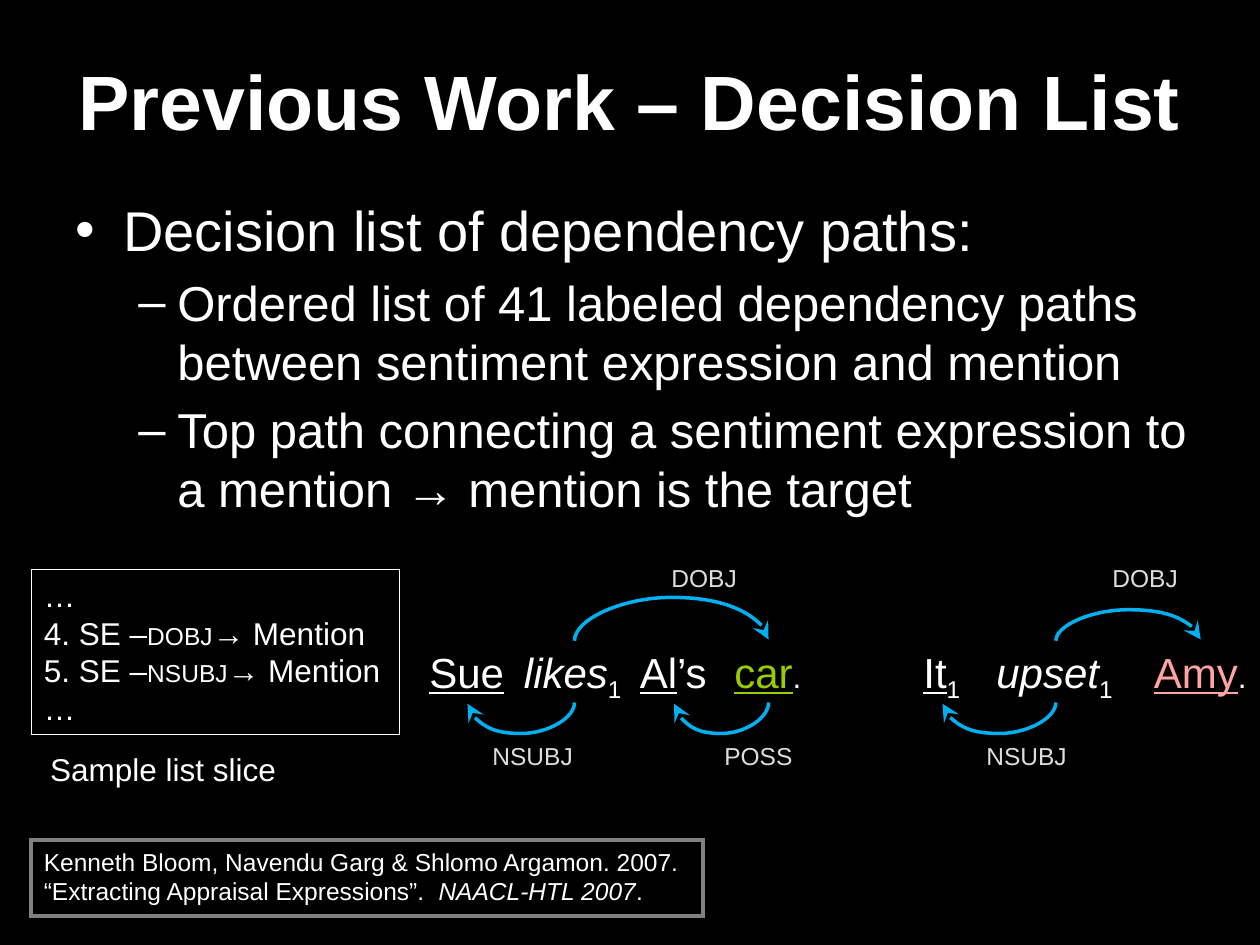
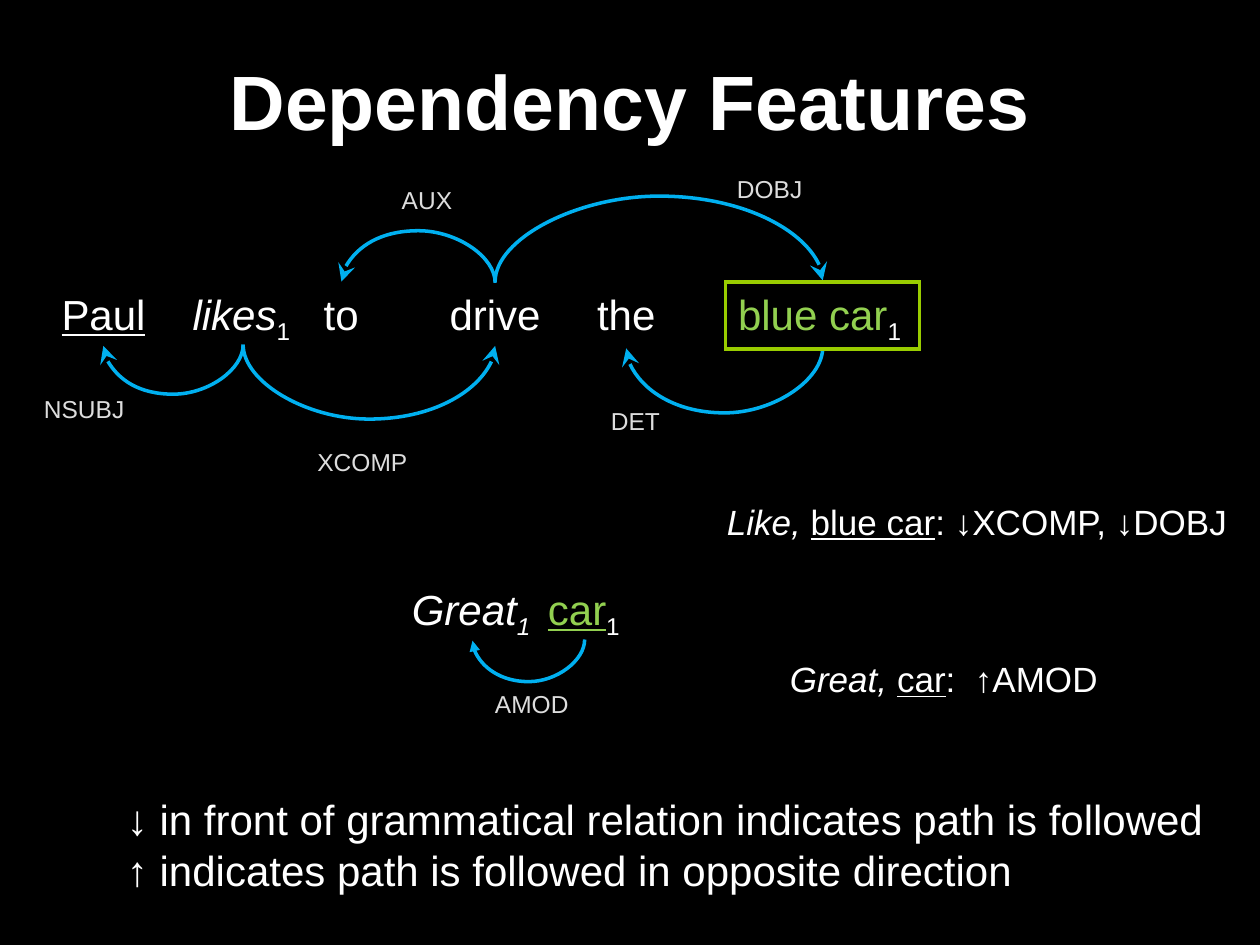
import dataclasses

import pptx
import pptx.dml.color
import pptx.enum.shapes
import pptx.enum.text
import pptx.oxml
import pptx.oxml.ns
import pptx.util

Inches, Pt = pptx.util.Inches, pptx.util.Pt
RGB = pptx.dml.color.RGBColor.from_string
ANCHOR, AUTO = pptx.enum.text.MSO_ANCHOR, pptx.enum.text.MSO_AUTO_SIZE
RECTANGLE = pptx.enum.shapes.MSO_SHAPE.RECTANGLE
CURVE = pptx.enum.shapes.MSO_CONNECTOR.CURVE
SPACE = pptx.oxml.ns.nsdecls("a")


@dataclasses.dataclass(frozen=True)
class Theme:
    font: str = "Arial"
    background: str = "000000"
    text: str = "FFFFFF"
    label: str = "DDDDDD"
    arc: str = "00B0F0"
    target: str = "99CC00"
    feature: str = "92D050"
    rival: str = "FFA3A3"
    citation_line: str = "808080"
    title_size: int = 44
    body_size: int = 32
    sub_size: int = 28
    word_size: int = 24
    path_size: int = 20
    note_size: int = 18
    label_size: int = 14


theme = Theme()
ITALIC, MENTION = {"italic": True}, {"underline": True}
SUB = {"baseline": "-25000"}
STEALTH = 'type="stealth" w="lg" len="lg"'
TRIANGLE = 'type="triangle"'


def write(holder, paragraphs, size, wrap=False, anchor=ANCHOR.TOP, **base):
    """Fill a shape with paragraphs, each a list of (text, format) runs."""
    frame = holder.text_frame
    frame.word_wrap, frame.vertical_anchor = wrap, anchor
    frame.auto_size = AUTO.NONE if wrap else AUTO.SHAPE_TO_FIT_TEXT
    for number, runs in enumerate(paragraphs):
        paragraph = frame.paragraphs[0] if number == 0 else frame.add_paragraph()
        paragraph.alignment = pptx.enum.text.PP_ALIGN.LEFT
        for text, changes in runs:
            run = paragraph.add_run()
            run.text = text
            style = {"size": size, "color": theme.text, "name": theme.font, **base, **changes}
            run.font.color.rgb = RGB(style.pop("color"))
            if "baseline" in style:
                run.font._element.set("baseline", style.pop("baseline"))
            style["size"] = Pt(style["size"])
            for attribute, value in style.items():
                setattr(run.font, attribute, value)
    return frame


def add_arc(slide, start, end, base, depth, head=STEALTH):
    """Curve from start to end along the line y = base; a negative depth bulges up."""
    thin, span, middle = 0.01, abs(end - start), (start + end) / 2
    arc = slide.shapes.add_connector(
        CURVE, Inches(middle - thin / 2), Inches(base - span / 2),
        Inches(middle + thin / 2), Inches(base + span / 2))
    arc.line.color.rgb, arc.line.width = RGB(theme.arc), Pt(2)
    properties = arc._element.spPr
    frame = properties.find(pptx.oxml.ns.qn("a:xfrm"))
    frame.set("rot", str((90 if depth > 0 else 270) * 60000))
    if (depth > 0) == (end > start):
        frame.set("flipV", "1")
    adjust = properties.find(pptx.oxml.ns.qn("a:prstGeom")).get_or_add_avLst()
    adjust.append(pptx.oxml.parse_xml(
        f'<a:gd {SPACE} name="adj1" fmla="val {round(abs(depth) / thin * 100000)}"/>'))
    arc.line._get_or_add_ln().append(pptx.oxml.parse_xml(f"<a:tailEnd {SPACE} {head}/>"))
    properties.append(pptx.oxml.parse_xml(f"<a:effectLst {SPACE}/>"))


likes = [("likes", ITALIC), ("1", SUB)]
decision_list = {
    "title": "Previous Work – Decision List",
    "words": [  # left, top, width, runs
        (3.31, 5.08, 0.8, [("Sue", MENTION)]),
        (4.06, 5.08, 0.99, likes),
        (4.98, 5.08, 0.74, [("Al", MENTION), ("’s", {})]),
        (5.73, 5.08, 0.73, [("car", {**MENTION, "color": theme.target}),
                            (".", {"size": theme.note_size})]),
        (7.23, 5.08, 0.51, [("It", MENTION), ("1", SUB)]),
        (7.81, 5.08, 1.14, [("upset", ITALIC), ("1", SUB)]),
        (9.06, 5.08, 0.94, [("Amy", {**MENTION, "color": theme.rival}),
                            (".", {"size": theme.note_size})]),
    ],
    "relations": [  # left, top, width, name
        (3.81, 5.83, 0.84, "NSUBJ"), (5.65, 5.83, 0.74, "POSS"),
        (5.23, 4.42, 0.72, "DOBJ"), (7.73, 5.83, 0.84, "NSUBJ"),
        (8.73, 4.42, 0.72, "DOBJ"),
    ],
    "arcs": [  # start, end, base, depth
        (4.56, 3.71, 5.58, 0.25), (6.1, 5.35, 5.58, 0.25), (4.56, 6.1, 5.08, -0.35),
        (8.38, 7.48, 5.58, 0.25), (8.38, 9.53, 5.08, -0.25),
    ],
    "boxes": [  # place, line colour, line width, paragraphs, size, wrap
        ((0.25, 6.67, 5.33, 0.6), theme.citation_line, 2.25,
         [[("Kenneth Bloom, Navendu Garg & Shlomo Argamon. 2007. "
            "“Extracting Appraisal Expressions”.  ", {}),
           ("NAACL-HTL 2007", ITALIC), (".", {})]], theme.label_size, True),
        ((0.25, 4.52, 2.92, 1.31), theme.text, 0.75,
         [[("…", {})],
          *[[(f"{rank}. SE –", {}), (relation, {"size": theme.label_size}), ("→ Mention", {})]
            for rank, relation in ((4, "DOBJ"), (5, "NSUBJ"))],
          [("…", {})]], theme.note_size, True),
    ],
    "notes": [  # place, paragraphs, size
        ((0.3, 5.9, 1.99, 0.4), [[("Sample list slice", {})]], theme.note_size),
    ],
}
dependency_features = {
    "title": "Dependency Features",
    "words": [
        (3.17, 4.58, 1.16, [("Great", ITALIC), ("1", {**ITALIC, **SUB})]),
        (4.25, 4.58, 0.79, [("car", {**MENTION, "color": theme.feature}), ("1", SUB)]),
        (0.39, 2.24, 0.87, [("Paul", MENTION)]),
        (1.43, 2.24, 0.99, likes),
        (2.47, 2.24, 0.48, [("to", {})]),
        (3.47, 2.24, 0.93, [("drive", {})]),
        (4.64, 2.24, 0.66, [("the", {})]),
    ],
    "relations": [
        (3.83, 5.42, 0.82, "AMOD"), (4.75, 3.17, 0.59, "DET"), (2.42, 3.5, 0.95, "XCOMP"),
        (0.25, 3.08, 0.84, "NSUBJ"), (3.09, 1.42, 0.6, "AUX"), (5.75, 1.33, 0.72, "DOBJ"),
    ],
    "arcs": [
        (4.64, 3.75, 5.08, 0.34, TRIANGLE), (6.53, 4.97, 2.76, 0.53),
        (1.93, 3.93, 2.74, 0.6), (1.93, 0.82, 2.74, 0.4),
        (3.93, 2.71, 2.24, -0.42), (3.93, 6.53, 2.23, -0.69),
    ],
    "boxes": [
        ((5.76, 2.24, 1.54, 0.53), theme.target, 2,
         [[("blue car", {"color": theme.feature}), ("1", SUB)]], theme.word_size, False),
    ],
    "notes": [
        ((0.91, 6.25, 8.83, 0.91),
         [[("↓ in front of grammatical relation indicates path is followed", {})],
          [("↑ indicates path is followed in opposite direction", {})]], theme.word_size),
        ((5.67, 3.92, 4.26, 0.44),
         [[("Like, ", ITALIC), ("blue car", MENTION), (": ↓XCOMP, ↓DOBJ", {})]],
         theme.path_size),
        ((6.17, 5.17, 2.68, 0.44),
         [[("Great, ", ITALIC), ("car", MENTION), (":  ↑AMOD", {})]], theme.path_size),
    ],
}

deck = pptx.Presentation()
deck.slide_width, deck.slide_height = Inches(10), Inches(7.5)
backdrop = deck.slide_master.background.fill
backdrop.solid()
backdrop.fore_color.rgb = RGB(theme.background)

for content in (decision_list, dependency_features):
    slide = deck.slides.add_slide(deck.slide_layouts[5])
    title = slide.shapes.title
    title.left, title.top, title.width, title.height = map(Inches, (0.5, 0.17, 9, 1.25))
    heading = write(title, [[(content["title"], {})]], theme.title_size,
                    wrap=True, anchor=ANCHOR.MIDDLE, bold=True)
    heading.paragraphs[0].alignment = pptx.enum.text.PP_ALIGN.CENTER

    for place, paragraphs, size in content["notes"]:
        write(slide.shapes.add_textbox(*map(Inches, place)), paragraphs, size)
    for left, top, width, runs in content["words"]:
        word = slide.shapes.add_textbox(*map(Inches, (left, top, width, 0.5)))
        write(word, [runs], theme.word_size)
    for left, top, width, name in content["relations"]:
        relation = slide.shapes.add_textbox(*map(Inches, (left, top, width, 0.33)))
        write(relation, [[(name, {})]], theme.label_size, color=theme.label)
    for arc in content["arcs"]:
        add_arc(slide, *arc)
    for place, colour, weight, paragraphs, size, wrap in content["boxes"]:
        box = slide.shapes.add_shape(RECTANGLE, *map(Inches, place))
        box.shadow.inherit = False
        box.fill.background()
        box.line.color.rgb, box.line.width = RGB(colour), Pt(weight)
        box.line._get_or_add_ln().append(
            pptx.oxml.parse_xml(f'<a:miter {SPACE} lim="800000"/>'))
        write(box, paragraphs, size, wrap)

# Bulleted summary on the first slide: bullet, left margin, hanging indent, size, text
points = [
    ("•", 0.38, 0.38, theme.body_size, "Decision list of dependency paths:"),
    ("–", 0.81, 0.31, theme.sub_size,
     "Ordered list of 41 labeled dependency paths between sentiment expression and mention"),
    ("–", 0.81, 0.31, theme.sub_size,
     "Top path connecting a sentiment expression to a mention → mention is the target"),
]
summary = deck.slides[0].shapes.add_textbox(*map(Inches, (0.5, 1.5, 9.33, 2.92)))
lines = write(summary, [[(text, {"size": size})] for *_, size, text in points],
              theme.body_size, wrap=True).paragraphs
for line, (bullet, margin, hanging, size, _) in zip(lines, points):
    line.space_before = Pt(size * 0.2)
    layout = line._p.get_or_add_pPr()
    layout.set("marL", str(Inches(margin)))
    layout.set("indent", str(-Inches(hanging)))
    for mark in (f'buFont {SPACE} typeface="{theme.font}"', f'buChar {SPACE} char="{bullet}"'):
        layout.append(pptx.oxml.parse_xml(f"<a:{mark}/>"))

deck.save("out.pptx")
